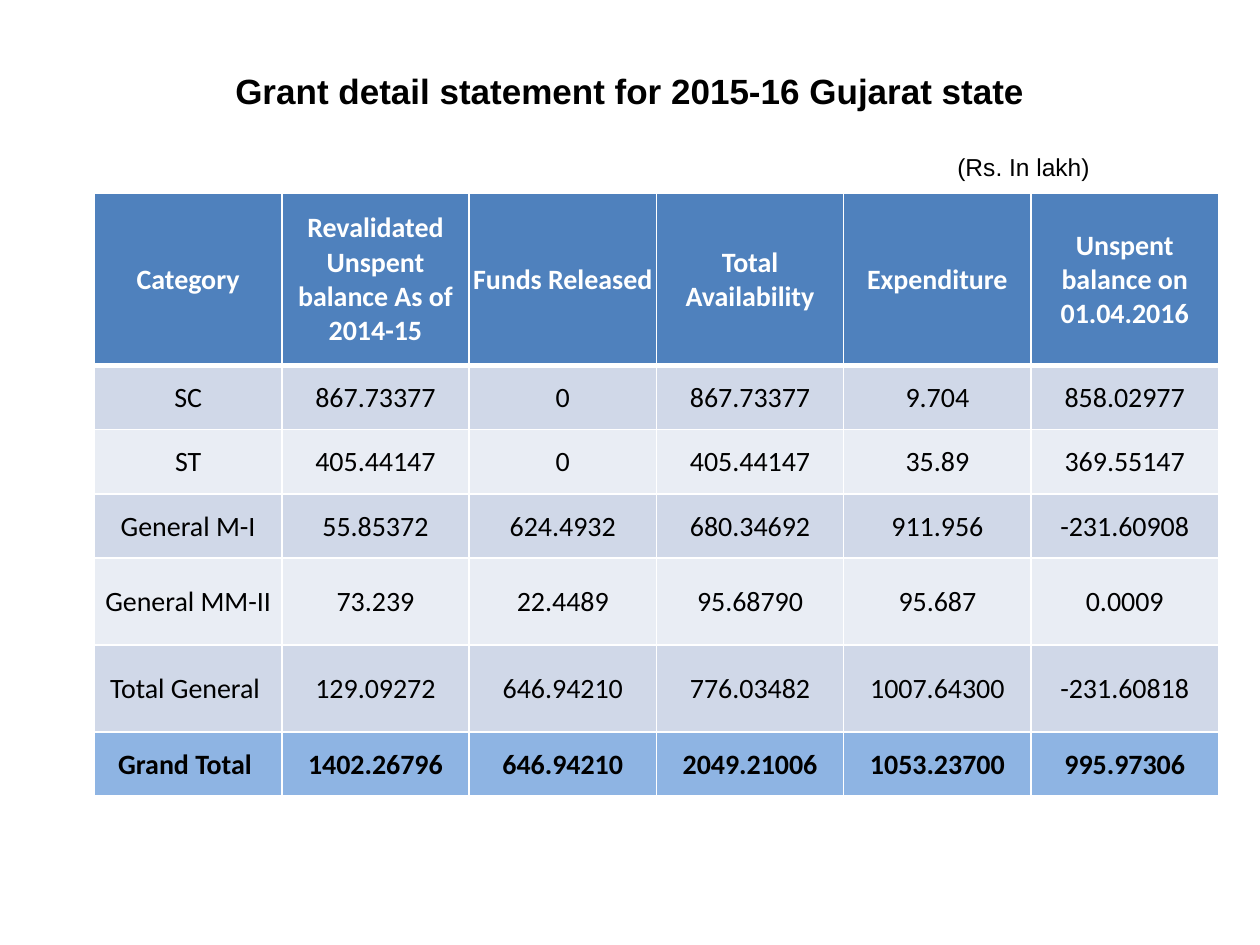
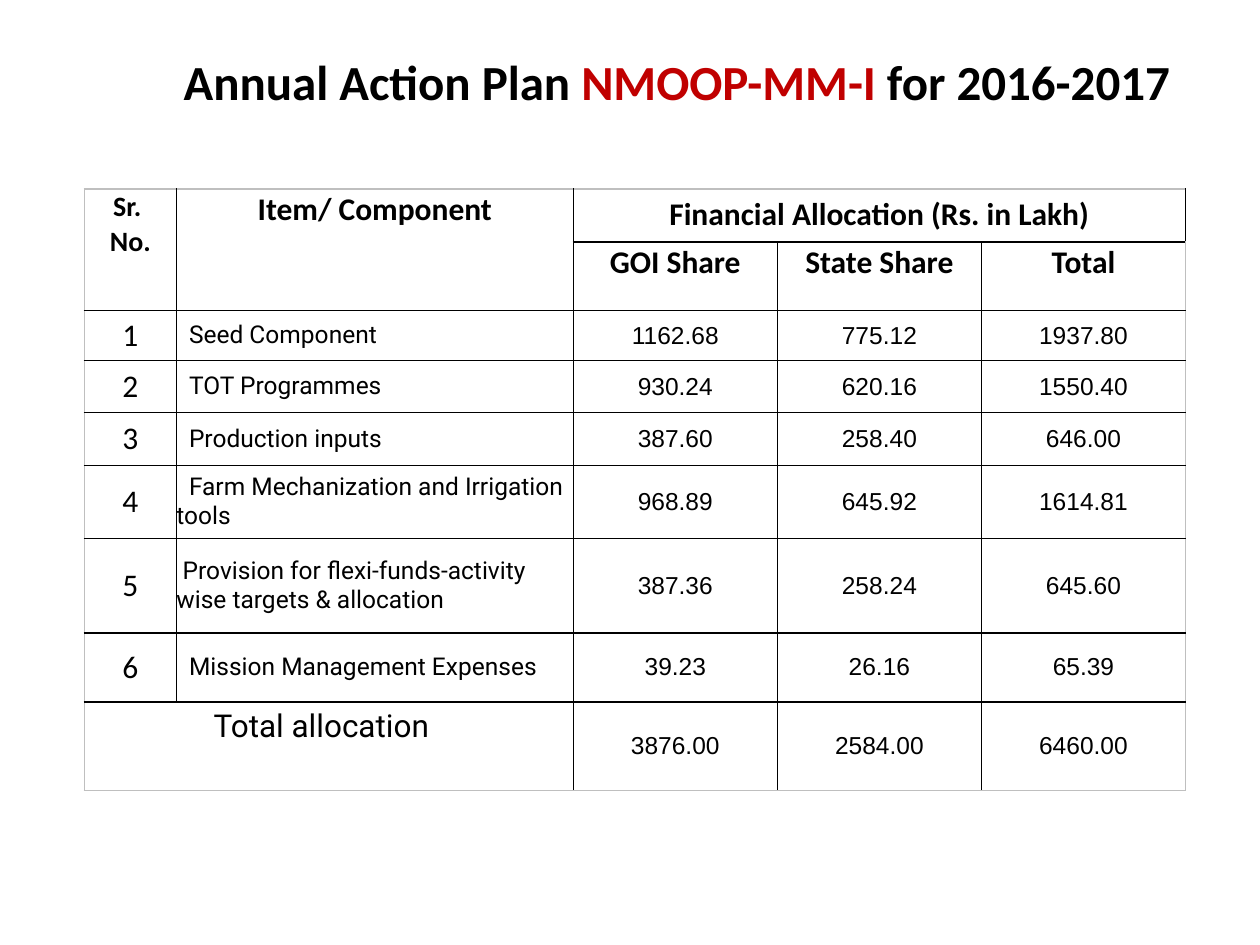
from pptx import Presentation
from pptx.dml.color import RGBColor
from pptx.enum.text import MSO_ANCHOR, PP_ALIGN
from pptx.oxml.xmlchemy import OxmlElement
from pptx.util import Inches, Pt

LEFT, CENTER = PP_ALIGN.LEFT, PP_ALIGN.CENTER
TOP, MIDDLE, BOTTOM = MSO_ANCHOR.TOP, MSO_ANCHOR.MIDDLE, MSO_ANCHOR.BOTTOM
BLACK, WHITE, GRAY, RED = "000000", "FFFFFF", "BFBFBF", "C00000"
HEADER, BAND, LIGHT, GRAND = "4F81BD", "D0D8E8", "E9EDF4", "8EB4E3"
SIDES = ("lnL", "lnR", "lnT", "lnB")
MARGINS = ("margin_left", "margin_top", "margin_right", "margin_bottom")
TIGHT, ROOMY, NONE = (1, 1, 1, 0), (10, 5, 10, 5), (0, 0, 0, 0)

prs = Presentation()
prs.slide_width, prs.slide_height = Inches(10), Inches(7.5)
U = prs.slide_width // 1000
BLANK = prs.slide_layouts[6]


def write(tf, text, size, name="Calibri", color=BLACK, bold=False, al=CENTER, indent=0):
    for i, line in enumerate(text.split("\n")):
        p = tf.paragraphs[0] if i == 0 else tf.add_paragraph()
        p.alignment = al
        if indent:
            p._p.get_or_add_pPr().set("indent", str(indent * U))
        for j, part in enumerate(line.split("|")):
            r = p.add_run()
            r.text = part
            for key, value in dict(size=Pt(size), name=name, bold=bold).items():
                setattr(r.font, key, value)
            r.font.color.rgb = RGBColor.from_string(RED if j == 1 else color)


def style_cell(cell, borders, fill=None, anchor=MIDDLE, insets=TIGHT):
    tcPr = cell._tc.get_or_add_tcPr()
    for side, (color, width) in zip(SIDES, borders):
        ln = OxmlElement(f"a:{side}")
        ln.set("w", str(Pt(width)))
        paint = OxmlElement("a:solidFill" if color else "a:noFill")
        if color:
            clr = OxmlElement("a:srgbClr")
            clr.set("val", color)
            paint.append(clr)
        ln.append(paint)
        tcPr.append(ln)
    if fill:
        cell.fill.solid()
        cell.fill.fore_color.rgb = RGBColor.from_string(fill)
    else:
        cell.fill.background()
    cell.vertical_anchor = anchor
    for key, value in zip(MARGINS, insets):
        setattr(cell, key, value * U)


grant = prs.slides.add_slide(BLANK)
for text, at, fmt in (
    ("Grant detail statement for 2015-16 Gujarat state", (175, 50, 650, 44), dict(size=20, bold=True)),
    ("(Rs. In lakh)", (750, 116, 150, 34), dict(size=14, al=LEFT)),
):
    tf = grant.shapes.add_textbox(*(v * U for v in at)).text_frame
    tf.word_wrap = True
    write(tf, text, name="Arial", **fmt)

grant_rows = (
    ("Category", "Revalidated Unspent balance As of 2014-15", "Funds Released",
     "Total Availability", "Expenditure", "Unspent balance on 01.04.2016"),
    ("SC", "867.73377", "0", "867.73377", "9.704", "858.02977"),
    ("ST", "405.44147", "0", "405.44147", "35.89", "369.55147"),
    ("General M-I", "55.85372", "624.4932", "680.34692", "911.956", "-231.60908"),
    ("General MM-II", "73.239", "22.4489", "95.68790", "95.687", "0.0009"),
    ("Total General ", "129.09272", "646.94210", "776.03482", "1007.64300", "-231.60818"),
    ("Grand Total ", "1402.26796", "646.94210", "2049.21006", "1053.23700", "995.97306"),
)
grant_heights = (137, 51, 51, 51, 69, 69, 51)
grant_fills = (HEADER, BAND, LIGHT, BAND, LIGHT, BAND, GRAND)
table = grant.shapes.add_table(7, 6, 75 * U, 153 * U, 892 * U, sum(grant_heights) * U).table
for row, height in zip(table.rows, grant_heights):
    row.height = height * U
for i, values in enumerate(grant_rows):
    borders = [(WHITE, 1), (WHITE, 1), (WHITE, 3 if i == 1 else 1), (WHITE, 3 if i == 0 else 1)]
    for j, text in enumerate(values):
        cell = table.cell(i, j)
        style_cell(cell, borders, grant_fills[i])
        write(cell.text_frame, text, 16, color=BLACK if i else WHITE, bold=i in (0, 6))

plan = prs.slides.add_slide(BLANK)
plan_heights = (42, 54, 40, 41, 42, 58, 75, 55, 70)
plan_widths = (73, 315, 162, 162, 162)
table = plan.shapes.add_table(9, 5, 67 * U, 150 * U, 874 * U, sum(plan_heights) * U).table
for row, height in zip(table.rows, plan_heights):
    row.height = height * U
for column, width in zip(table.columns, plan_widths):
    column.width = width * U
for i in range(9):
    for j in range(5):
        edges = (j == 0, j == 4, i == 0, i == 8)
        borders = [(GRAY if edge else BLACK, 1) for edge in edges]
        style_cell(table.cell(i, j), borders, None, MIDDLE if i > 1 else TOP, NONE if i > 1 else TIGHT)
for first, last in (((0, 0), (1, 0)), ((0, 1), (1, 1)), ((0, 2), (0, 4)), ((8, 0), (8, 1))):
    table.cell(*first).merge(table.cell(*last))

for i, j, text, size in (
    (0, 0, "Sr. \nNo.", 16),
    (0, 1, "Item/ Component", 18),
    (0, 2, "Financial Allocation (Rs. in Lakh)", 18),
    (1, 2, "GOI Share", 18),
    (1, 3, "State Share", 18),
    (1, 4, "Total", 18),
):
    write(table.cell(i, j).text_frame, text, size, bold=True)

components = (
    ("Seed Component", "1162.68", "775.12", "1937.80"),
    ("TOT Programmes", "930.24", "620.16", "1550.40"),
    ("Production inputs", "387.60", "258.40", "646.00"),
    ("Farm Mechanization and Irrigation tools", "968.89", "645.92", "1614.81"),
    ("Provision for flexi-funds-activity wise targets & allocation", "387.36", "258.24", "645.60"),
    ("Mission Management Expenses", "39.23", "26.16", "65.39"),
    ("Total allocation", "3876.00", "2584.00", "6460.00"),
)
for n, (item, *amounts) in enumerate(components, 1):
    i = n + 1
    if n < len(components):
        write(table.cell(i, 0).text_frame, str(n), 18)
        write(table.cell(i, 1).text_frame, item, 14, "Roboto", al=LEFT, indent=5 if n == 5 else 10)
    else:
        write(table.cell(i, 0).text_frame, item, 18, "Roboto")
    for j, amount in enumerate(amounts, 2):
        write(table.cell(i, j).text_frame, amount, 14, "Arial")

for cell, anchor, insets in (
    (table.cell(0, 2), TOP, ROOMY),
    (table.cell(8, 0), TOP, (10, 5, 22, 5)),
):
    cell.vertical_anchor = anchor
    for key, value in zip(MARGINS, insets):
        setattr(cell, key, value * U)

cell = plan.shapes.add_table(1, 1, 125 * U, 42 * U, 833 * U, 47 * U).table.cell(0, 0)
style_cell(cell, [(None, 1)] * 4, None, BOTTOM)
write(cell.text_frame, "Annual Action Plan |NMOOP-MM-I| for 2016-2017 ", 28, bold=True)

prs.save("out.pptx")
